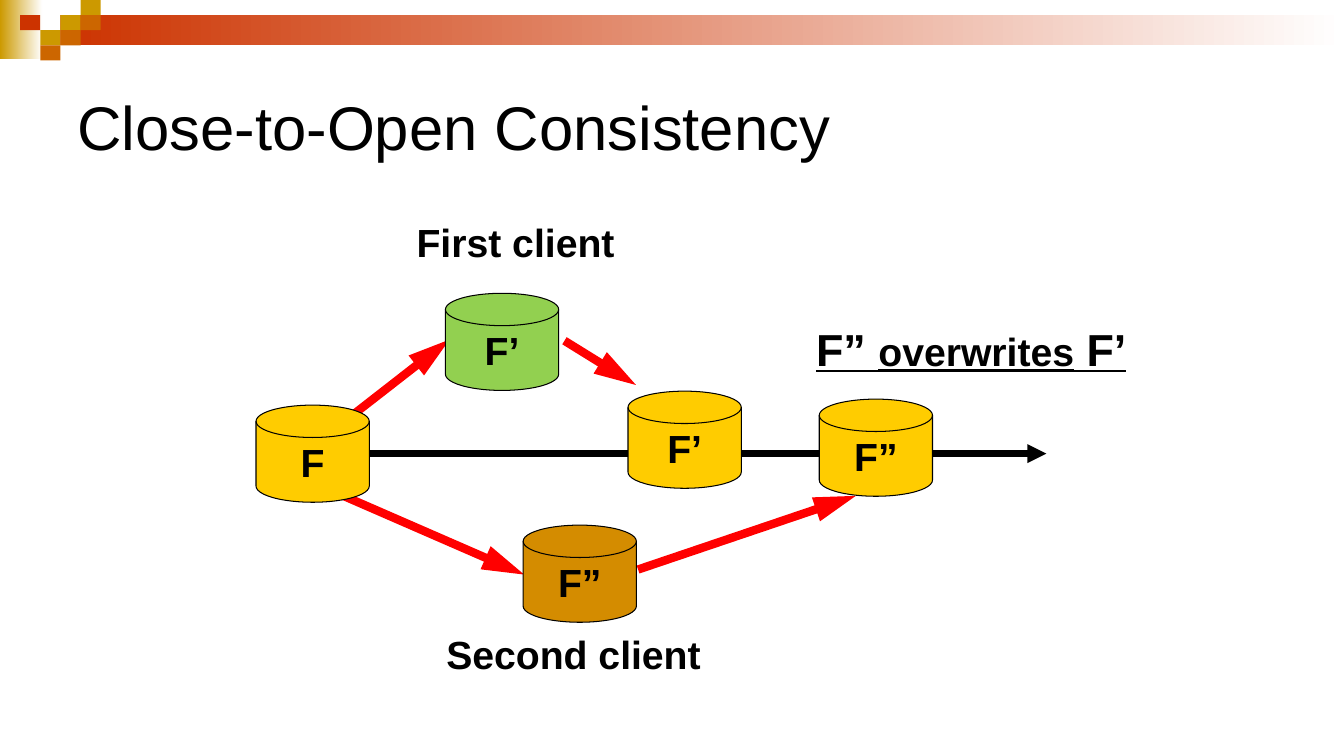
from collections import namedtuple

from lxml.etree import SubElement
from pptx import Presentation
from pptx.dml.color import RGBColor
from pptx.enum.shapes import MSO_CONNECTOR as Connector, MSO_SHAPE as Shape
from pptx.enum.text import MSO_ANCHOR as Anchor, MSO_AUTO_SIZE as AutoSize, PP_ALIGN as Align
from pptx.oxml.ns import qn
from pptx.util import Pt

Box = namedtuple("Box", "left top width height")

FONT = "Arial"
BLACK = RGBColor(0x00, 0x00, 0x00)
WHITE = RGBColor(0xFF, 0xFF, 0xFF)
RED = RGBColor(0xFF, 0x00, 0x00)
BRICK = RGBColor(0xCC, 0x33, 0x00)
ORANGE = RGBColor(0xCC, 0x66, 0x00)
GOLD = RGBColor(0xCC, 0x99, 0x00)
YELLOW = RGBColor(0xFF, 0xCC, 0x00)
GREEN = RGBColor(0x92, 0xD0, 0x50)
BROWN = RGBColor(0xD4, 0x8C, 0x00)

TILE_WIDTH, TILE_HEIGHT = 14.4, 10.8
DISK_WIDTH, DISK_HEIGHT = 80.9, 69.4

# Column, row, colour
TILES = [
    (3, 1, GOLD), (4, 0, GOLD), (4, 1, ORANGE), (2, 2, GOLD),
    (1, 1, BRICK), (3, 2, ORANGE), (2, 3, ORANGE),
]
# Start, end, colour, line width, head length; points relative to the diagram
ARROWS = [
    ((63.4, 153.1), (141.1, 92.6), RED, 6, "lg"),
    ((30.2, 174), (567.4, 174), BLACK, 4.5, "med"),
    ((223.2, 93.4), (274.3, 125), RED, 6, "lg"),
    ((60.5, 202.1), (194.4, 260.4), RED, 6, "lg"),
    ((275.8, 256.8), (431.3, 204.2), RED, 6, "lg"),
]
# Box relative to the diagram, (text, size) pieces, underline
LABELS = [
    (Box(109.4, 2.6, 157.7, 41.2), [("First client", 28)], False),
    (Box(130.3, 296.4, 198.7, 41.2), [("Second client", 28)], False),
    (Box(394.6, 76.1, 238.3, 46), [("F” ", 32), ("overwrites", 28), (" F’", 32)], True),
]
# Left, top, text, colour
DISKS = [
    (2.9, 139.4, "F", YELLOW),
    (405.2, 135.1, "F”", YELLOW),
    (268.6, 129.4, "F’", YELLOW),
    (138.2, 59.5, "F’", GREEN),
    (193.7, 225.1, "F”", BROWN),
]


def format_span(span, size, bold=True, underline=None):
    font = span.font
    font.name, font.size, font.bold, font.underline = FONT, Pt(size), bold, underline
    font.color.rgb = BLACK


def add_plain_shape(slide, kind, box):
    shape = slide.shapes.add_shape(kind, *map(Pt, box))
    shape.shadow.inherit = False
    shape.line.fill.background()
    return shape


def add_fading_bar(slide, box, color):
    """Draw a bar that fades to white from left to right."""
    fill = add_plain_shape(slide, Shape.RECTANGLE, box).fill
    fill.gradient()
    fill.gradient_angle = 0
    for stop, position, stop_color in zip(fill.gradient_stops, (0, 1), (color, WHITE)):
        stop.position = position
        stop.color.rgb = stop_color


def add_banner(slide, box):
    bar_left = 3 * TILE_WIDTH
    add_fading_bar(slide, Box(box.left, box.top, 30.2, 42), GOLD)
    add_fading_bar(slide, Box(box.left + bar_left, box.top + TILE_HEIGHT,
                              box.width - bar_left, 2 * TILE_HEIGHT), BRICK)
    for column, row, color in TILES:
        tile = add_plain_shape(slide, Shape.RECTANGLE, Box(
            box.left + column * TILE_WIDTH, box.top + row * TILE_HEIGHT,
            TILE_WIDTH, TILE_HEIGHT))
        tile.fill.solid()
        tile.fill.fore_color.rgb = color


def add_title(slide, box):
    title = slide.shapes.title
    title.left, title.top, title.width, title.height = map(Pt, box)
    frame = title.text_frame
    frame.text = "Close-to-Open Consistency"
    frame.vertical_anchor = Anchor.MIDDLE
    para = frame.paragraphs[0]
    para.alignment = Align.LEFT
    format_span(para.runs[0], 44, bold=False)


def add_arrow(slide, start, end, color, width, head_length):
    arrow = slide.shapes.add_connector(Connector.STRAIGHT, *map(Pt, start + end))
    arrow.line.color.rgb = color
    arrow.line.width = Pt(width)
    SubElement(arrow.line._get_or_add_ln(), qn("a:tailEnd"),
               type="triangle", w="med", len=head_length)
    SubElement(arrow._element.spPr, qn("a:effectLst"))


def add_label(slide, box, pieces, underline):
    frame = slide.shapes.add_textbox(*map(Pt, box)).text_frame
    frame.word_wrap = False
    frame.auto_size = AutoSize.SHAPE_TO_FIT_TEXT
    para = frame.paragraphs[0]
    para.alignment = Align.CENTER
    for text, size in pieces:
        span = para.add_run()
        span.text = text
        format_span(span, size, underline=underline)


def add_disk(slide, box, text, color):
    disk = add_plain_shape(slide, Shape.FLOWCHART_MAGNETIC_DISK, box)
    disk.fill.solid()
    disk.fill.fore_color.rgb = color
    disk.line.color.rgb = BLACK
    disk.line.width = Pt(0.75)
    frame = disk.text_frame
    frame.text = text
    frame.word_wrap = False
    frame.vertical_anchor = Anchor.MIDDLE
    para = frame.paragraphs[0]
    para.alignment = Align.CENTER
    format_span(para.runs[0], 28)


def add_diagram(slide, box):
    def place(left, top):
        return box.left + left, box.top + top

    for start, end, color, width, head_length in ARROWS:
        add_arrow(slide, place(*start), place(*end), color, width, head_length)
    for label, pieces, underline in LABELS:
        label_box = Box(*place(label.left, label.top), label.width, label.height)
        add_label(slide, label_box, pieces, underline)
    for left, top, text, color in DISKS:
        add_disk(slide, Box(*place(left, top), DISK_WIDTH, DISK_HEIGHT), text, color)


def main():
    deck = Presentation()
    deck.slide_width, deck.slide_height = Pt(960), Pt(540)
    page = deck.slides.add_slide(deck.slide_layouts[5])
    add_banner(page, Box(0, 0, 960, 43.2))
    add_title(page, Box(48, 36, 864, 108))
    add_diagram(page, Box(180, 150, 640, 340))
    deck.save("out.pptx")


if __name__ == "__main__":
    main()
